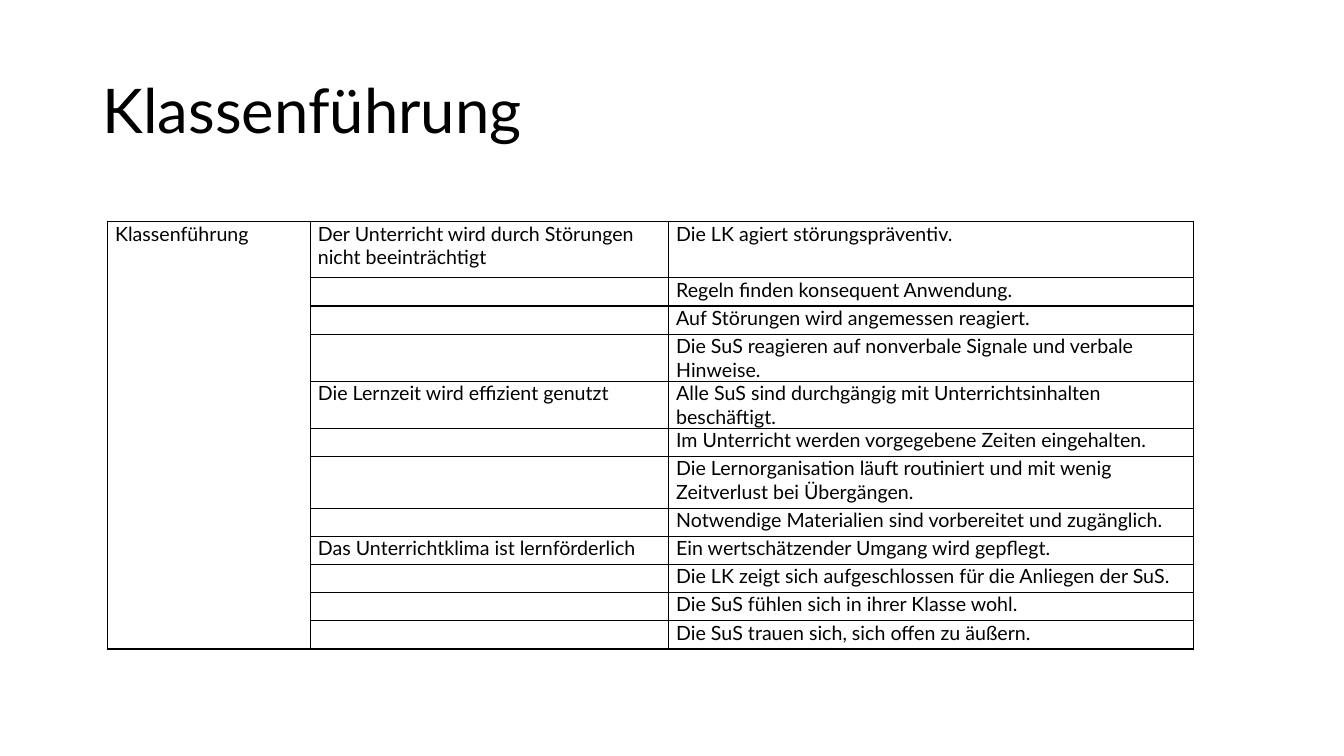
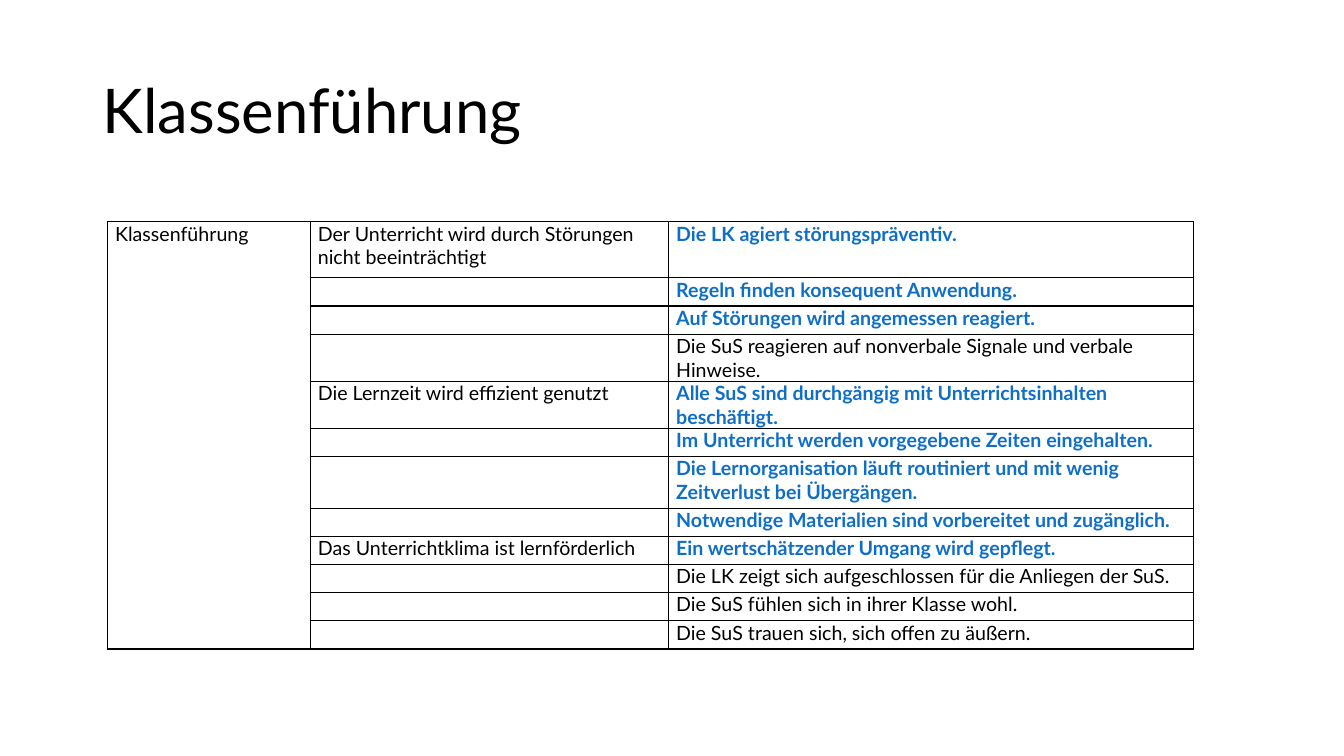
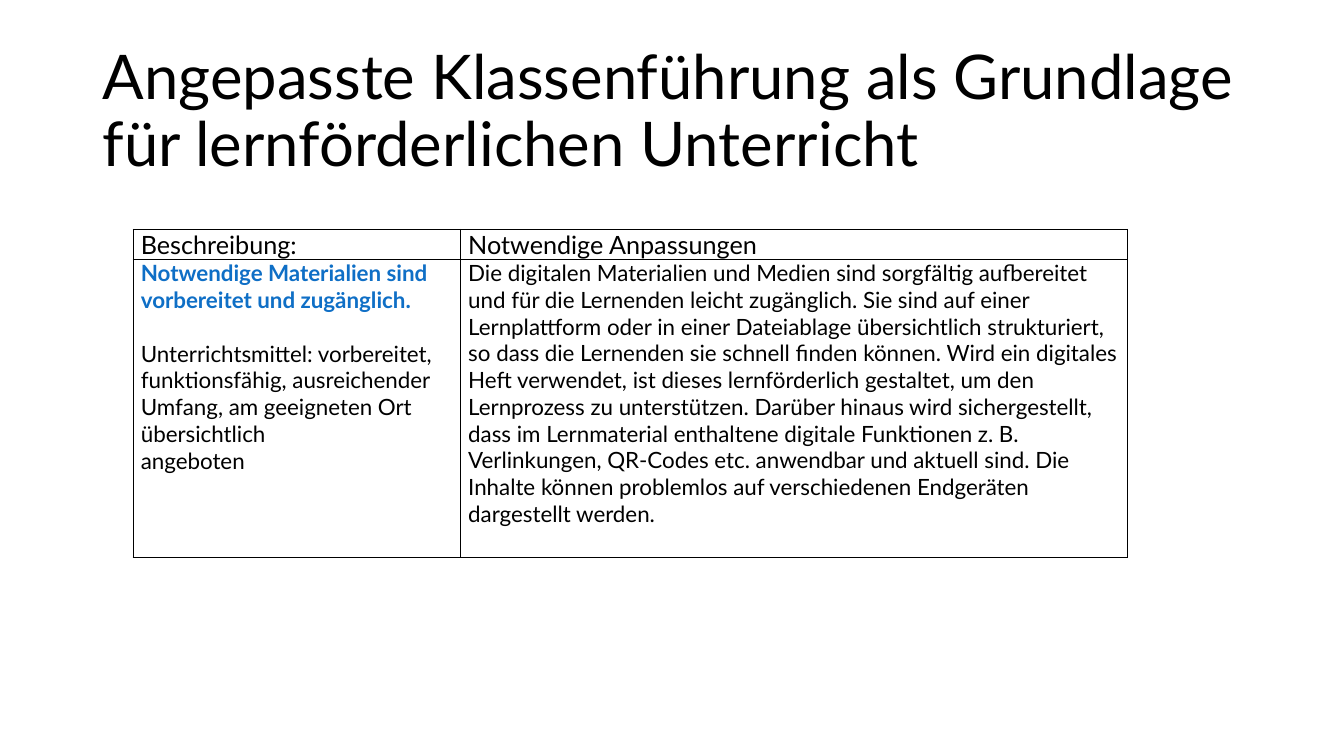
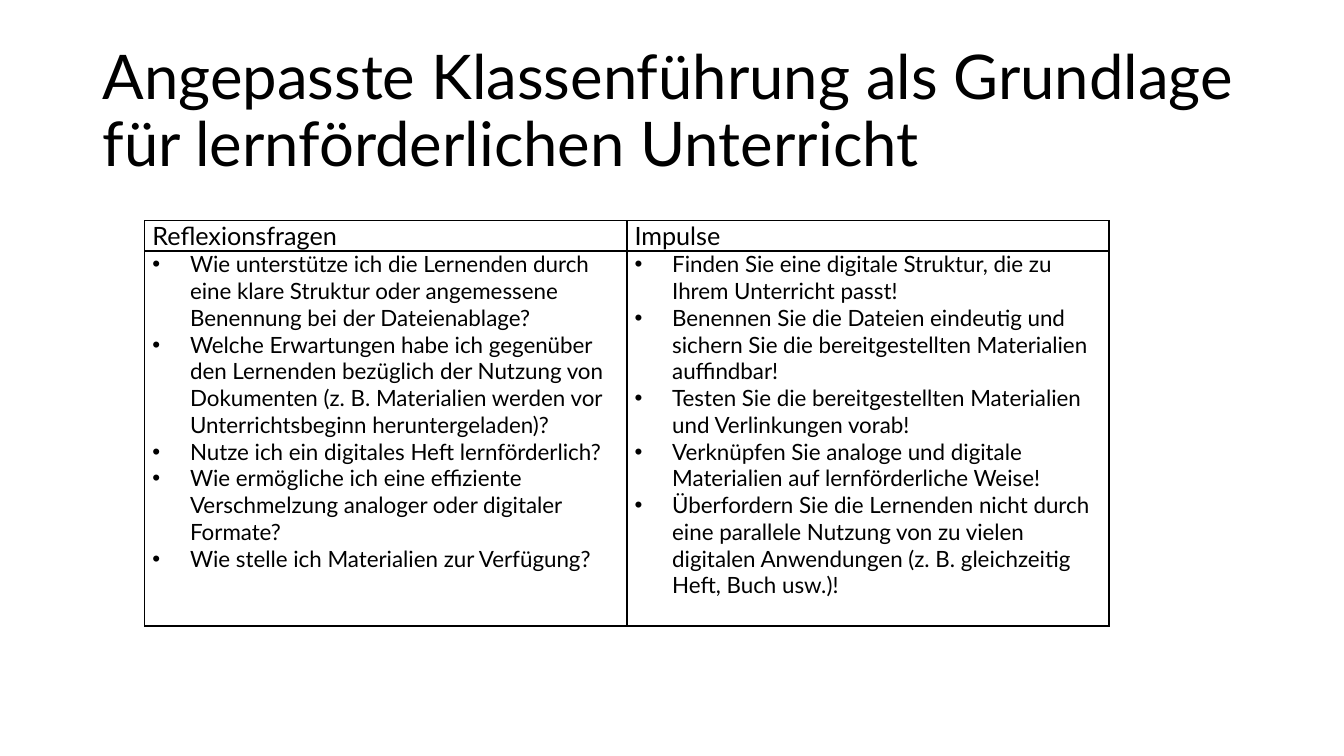
from dataclasses import dataclass

import pptx
import pptx.dml.color
import pptx.enum.text
import pptx.oxml
import pptx.oxml.ns
import pptx.util
from lxml import etree
from pptx.util import Cm, Pt


@dataclass(frozen=True)
class Theme:
    font: str = "Lato"
    text: str = "000000"
    highlight: str = "0F6FC6"
    title_size: int = 44
    header_size: int = 18
    body_size: int = 16
    criteria_size: int = 14
    border_width: int = 1


@dataclass(frozen=True)
class Entry:
    """One paragraph of a table cell."""
    text: str
    size: int
    highlight: bool = False
    bullet: bool = False
    space_after: float = 0


THEME = Theme()

CRITERIA = [
    ("Der Unterricht wird durch Störungen nicht beeinträchtigt", [
        "Die LK agiert störungspräventiv.",
        "Regeln finden konsequent Anwendung.",
        "Auf Störungen wird angemessen reagiert.",
        "Die SuS reagieren auf nonverbale Signale und verbale Hinweise.",
    ]),
    ("Die Lernzeit wird effizient genutzt", [
        "Alle SuS sind durchgängig mit Unterrichtsinhalten beschäftigt.",
        "Im Unterricht werden vorgegebene Zeiten eingehalten.",
        "Die Lernorganisation läuft routiniert und mit wenig Zeitverlust bei Übergängen.",
        "Notwendige Materialien sind vorbereitet und zugänglich.",
    ]),
    ("Das Unterrichtklima ist lernförderlich", [
        "Ein wertschätzender Umgang wird gepflegt.",
        "Die LK zeigt sich aufgeschlossen für die Anliegen der SuS.",
        "Die SuS fühlen sich in ihrer Klasse wohl.",
        "Die SuS trauen sich, sich offen zu äußern.",
    ]),
]
HIGHLIGHTED_ROWS = {0, 1, 2, 4, 5, 6, 7, 8}

OVERVIEW_TITLE = "Klassenführung"
ADAPTATION_TITLE = "Angepasste Klassenführung als Grundlage für lernförderlichen Unterricht"

ADAPTATIONS = (
    "Die digitalen Materialien und Medien sind sorgfältig aufbereitet und für die Lernenden "
    "leicht zugänglich. Sie sind auf einer Lernplattform oder in einer Dateiablage "
    "übersichtlich strukturiert, so dass die Lernenden sie schnell finden können. Wird ein "
    "digitales Heft verwendet, ist dieses lernförderlich gestaltet, um den Lernprozess zu "
    "unterstützen. Darüber hinaus wird sichergestellt, dass im Lernmaterial enthaltene "
    "digitale Funktionen z. B. Verlinkungen, QR-Codes etc. anwendbar und aktuell sind. Die "
    "Inhalte können problemlos auf verschiedenen Endgeräten dargestellt werden."
)

QUESTIONS = [
    "Wie unterstütze ich die Lernenden durch eine klare Struktur oder angemessene Benennung "
    "bei der Dateienablage?",
    "Welche Erwartungen habe ich gegenüber den Lernenden bezüglich der Nutzung von Dokumenten "
    "(z. B. Materialien werden vor Unterrichtsbeginn heruntergeladen)?",
    "Nutze ich ein digitales Heft lernförderlich?",
    "Wie ermögliche ich eine effiziente Verschmelzung analoger oder digitaler Formate?",
    "Wie stelle ich Materialien zur Verfügung?",
]
IMPULSES = [
    "Finden Sie eine digitale Struktur, die zu Ihrem Unterricht passt!",
    "Benennen Sie die Dateien eindeutig und sichern Sie die bereitgestellten Materialien "
    "auffindbar!",
    "Testen Sie die bereitgestellten Materialien und Verlinkungen vorab!",
    "Verknüpfen Sie analoge und digitale Materialien auf lernförderliche Weise!",
    "Überfordern Sie die Lernenden nicht durch eine parallele Nutzung von zu vielen digitalen "
    "Anwendungen (z. B. gleichzeitig Heft, Buch usw.)!",
]


def add_element(parent, tag, **attributes):
    return etree.SubElement(parent, pptx.oxml.ns.qn(tag), **attributes)


class Deck:
    def __init__(self, theme):
        self.theme = theme
        self.presentation = pptx.Presentation()
        self.presentation.slide_width = Cm(33.87)
        self.presentation.slide_height = Cm(19.05)
        self.slide = None

    def add_slide(self, title):
        title_only = self.presentation.slide_layouts[5]
        self.slide = self.presentation.slides.add_slide(title_only)
        shape = self.slide.shapes.title
        shape.left, shape.top = Cm(2.33), Cm(1.01)
        shape.width, shape.height = Cm(29.21), Cm(3.68)
        frame = shape.text_frame
        frame.word_wrap = True
        frame.auto_size = pptx.enum.text.MSO_AUTO_SIZE.NONE
        frame.vertical_anchor = pptx.enum.text.MSO_ANCHOR.MIDDLE
        paragraph = frame.paragraphs[0]
        paragraph.alignment = pptx.enum.text.PP_ALIGN.LEFT
        paragraph.line_spacing = 0.9
        self.add_run(paragraph, title, self.theme.title_size)

    def add_run(self, paragraph, text, size, highlight=False):
        run = paragraph.add_run()
        run.text = text
        run.font.name = self.theme.font
        run.font.size = Pt(size)
        run.font.bold = highlight
        color = self.theme.highlight if highlight else self.theme.text
        run.font.color.rgb = pptx.dml.color.RGBColor.from_string(color)

    def add_table(self, left, top, widths, heights, rows):
        """Add a bordered table; each cell of rows is a list of entries."""
        table = self.slide.shapes.add_table(
            len(rows), len(widths), Cm(left), Cm(top), Cm(sum(widths)), Cm(sum(heights))
        ).table
        table.first_row = table.horz_banding = False
        for column, width in zip(table.columns, widths):
            column.width = Cm(width)
        for row, height, entries_by_cell in zip(table.rows, heights, rows):
            row.height = Cm(height)
            for cell, entries in zip(row.cells, entries_by_cell):
                self.format_cell(cell)
                self.fill_cell(cell, entries)
        return table

    def format_cell(self, cell):
        cell.margin_left = cell.margin_right = Cm(0.19)
        cell.margin_top = cell.margin_bottom = 0
        properties = cell._tc.get_or_add_tcPr()
        for side in "LRTB":
            line = add_element(properties, f"a:ln{side}", w=str(Pt(self.theme.border_width)))
            fill = add_element(line, "a:solidFill")
            add_element(fill, "a:srgbClr", val=self.theme.text)
        cell.fill.background()

    def fill_cell(self, cell, entries):
        frame = cell.text_frame
        if not entries:
            size = str(self.theme.criteria_size * 100)
            add_element(frame.paragraphs[0]._p, "a:endParaRPr", sz=size)
        for index, entry in enumerate(entries):
            paragraph = frame.add_paragraph() if index else frame.paragraphs[0]
            if entry.space_after:
                paragraph.space_after = Pt(entry.space_after)
            if entry.bullet:
                self.add_bullet(paragraph)
            self.add_run(paragraph, entry.text, entry.size, entry.highlight)

    def add_bullet(self, paragraph):
        indent = Cm(0.95)
        properties = paragraph._p.get_or_add_pPr()
        properties.set("marL", str(indent))
        properties.set("indent", str(-indent))
        add_element(properties, "a:buFont", typeface="Arial")
        add_element(properties, "a:buChar", char="•")

    def add_criteria_slide(self, highlighted_rows=frozenset()):
        size = self.theme.criteria_size
        rows = []
        for goal, indicators in CRITERIA:
            for position, indicator in enumerate(indicators):
                topic_cell = [] if rows else [Entry(OVERVIEW_TITLE, size)]
                goal_cell = [] if position else [Entry(goal, size)]
                highlight = len(rows) in highlighted_rows
                rows.append([topic_cell, goal_cell, [Entry(indicator, size, highlight)]])
        heights = [0.71] * len(rows)
        heights[0], heights[6] = 1.41, 1.3
        self.add_slide(OVERVIEW_TITLE)
        table = self.add_table(2.71, 5.59, [5.11, 9.03, 13.23], heights, rows)
        table.cell(0, 0).merge(table.cell(len(rows) - 1, 0))

    def add_comparison_slide(self, left, top, widths, body_height, headers, bodies):
        """Add a slide with a header row above one row of longer text."""
        header_cells = [[Entry(header, self.theme.header_size)] for header in headers]
        self.add_slide(ADAPTATION_TITLE)
        self.add_table(left, top, widths, [0.75, body_height], [header_cells, bodies])


def main():
    deck = Deck(THEME)
    size = THEME.body_size

    deck.add_criteria_slide()
    deck.add_criteria_slide(HIGHLIGHTED_ROWS)

    description = [
        Entry("Notwendige Materialien sind vorbereitet und zugänglich.", size,
              highlight=True, space_after=size * 1.2),
        Entry("Unterrichtsmittel: vorbereitet, funktionsfähig, ausreichender Umfang, "
              "am geeigneten Ort übersichtlich", size),
        Entry("angeboten", size),
    ]
    deck.add_comparison_slide(
        3.36, 5.78, [8.25, 16.81], 7.5,
        ["Beschreibung:", "Notwendige Anpassungen"],
        [description, [Entry(ADAPTATIONS, size)]],
    )

    bullet_lists = [
        [Entry(text, size, bullet=True) for text in texts] for texts in (QUESTIONS, IMPULSES)
    ]
    deck.add_comparison_slide(
        3.65, 5.56, [12.15, 12.15], 9.45, ["Reflexionsfragen", "Impulse"], bullet_lists
    )

    deck.presentation.save("out.pptx")


if __name__ == "__main__":
    main()
